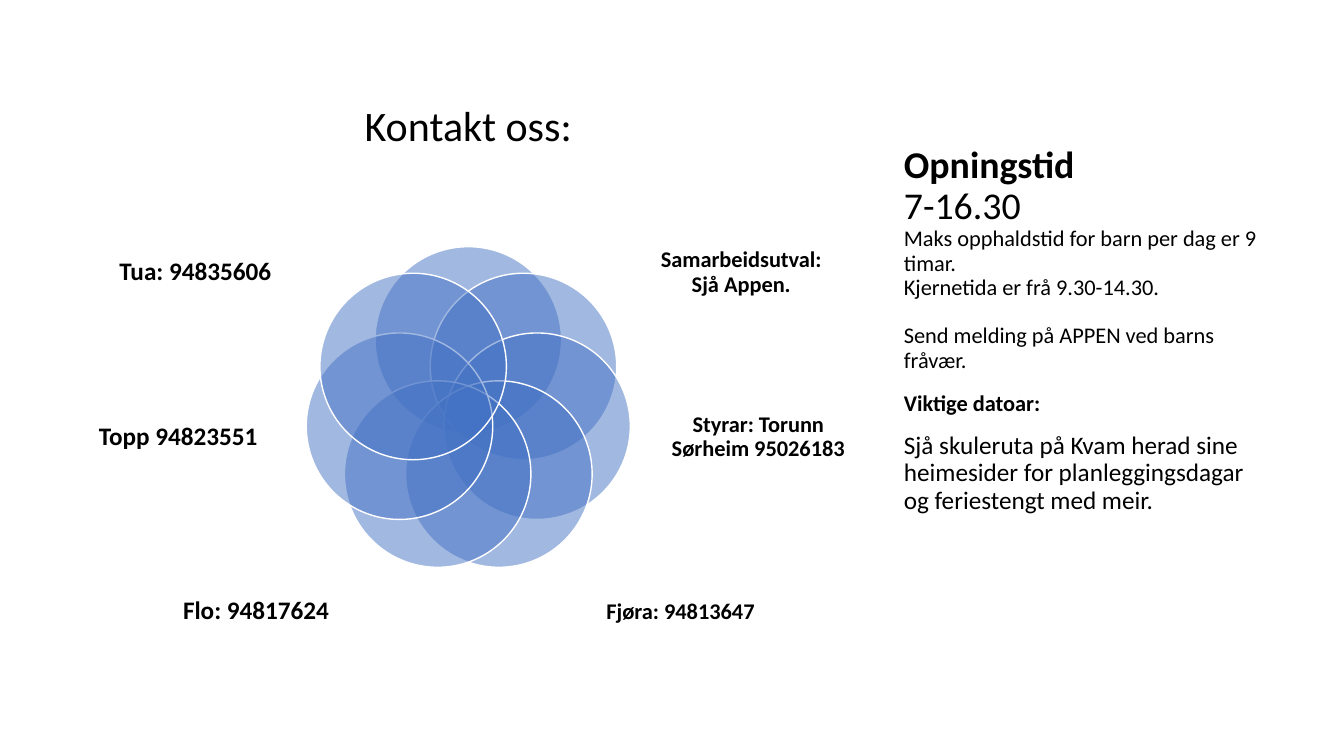
from math import cos, pi, sin
from lxml.etree import SubElement
from pptx import Presentation
from pptx.dml.color import RGBColor
from pptx.enum.shapes import MSO_SHAPE
from pptx.enum.text import MSO_ANCHOR, PP_ALIGN
from pptx.oxml.ns import qn
from pptx.util import Pt


def color(code):
    return RGBColor.from_string(code)


def add_text(box, lines, anchor, align, inset=None):
    left, top, width, height = box
    frame = slide.shapes.add_textbox(Pt(left), Pt(top), Pt(width), Pt(height)).text_frame
    frame.word_wrap = True
    frame.vertical_anchor = anchor
    if inset is not None:
        frame.margin_left = frame.margin_right = Pt(0)
        frame.margin_top = frame.margin_bottom = Pt(inset)
    for i, (text, size, bold, gap) in enumerate(lines):
        para = frame.paragraphs[0] if i == 0 else frame.add_paragraph()
        para.alignment = align
        para.line_spacing = 0.9
        para.space_before = Pt(gap)
        run = para.add_run()
        run.text = text
        run.font.name = "Calibri"
        run.font.size = Pt(size)
        run.font.bold = bold
        run.font.color.rgb = color("000000")


deck = Presentation()
deck.slide_width, deck.slide_height = Pt(960), Pt(540)
slide = deck.slides.add_slide(deck.slide_layouts[6])

hours = [
    ("Opningstid", 27, True, 0),
    ("7-16.30", 27, False, 0),
    ("Maks opphaldstid for barn per dag er 9 timar.", 16, False, 0),
    ("Kjernetida er frå 9.30-14.30.", 16, False, 0),
    ("Send melding på APPEN ved barns fråvær.", 16, False, 17.5),
]
add_text((638.6, 90, 273.6, 180), hours, MSO_ANCHOR.BOTTOM, PP_ALIGN.LEFT)

mid_x, mid_y, orbit, size = 334.5, 293.2, 50.4, 133.2
for i in range(7):
    angle = 2 * pi * i / 7
    left = mid_x + orbit * sin(angle) - size / 2
    top = mid_y - orbit * cos(angle) - size / 2
    petal = slide.shapes.add_shape(MSO_SHAPE.OVAL, Pt(left), Pt(top), Pt(size), Pt(size))
    petal.shadow.inherit = False
    petal.fill.solid()
    petal.fill.fore_color.rgb = color("4472C4")
    shade = petal.fill._xPr.find(qn("a:solidFill"))[0]
    SubElement(shade, qn("a:alpha")).set("val", "50000")
    petal.line.color.rgb = color("FFFFFF")
    petal.line.width = Pt(1)

add_text((258.2, 72, 152.6, 82), [("Kontakt oss:", 30, False, 0)],
         MSO_ANCHOR.TOP, PP_ALIGN.CENTER, 3)

rows = [
    (195, 149.8, 144.7, 90, ["Samarbeidsutval:", "Sjå Appen."], "Tua: 94835606"),
    (207.2, 264.2, 141.8, 96.5, ["Styrar: Torunn Sørheim 95026183"], "Topp 94823551"),
    (151.6, 393.1, 152.6, 87.8, ["Fjøra: 94813647"], "Flo: 94817624"),
]
for shift, top, width, height, right, left in rows:
    for side, texts, points in ((1, right, 16), (-1, [left], 18)):
        box = (mid_x + side * shift - width / 2, top, width, height)
        add_text(box, [(text, points, True, 0) for text in texts],
                 MSO_ANCHOR.MIDDLE, PP_ALIGN.CENTER, 0)

dates = [
    ("Viktige datoar:", 16, True, 0),
    ("Sjå skuleruta på Kvam herad sine heimesider for planleggingsdagar "
     "og feriestengt med meir.", 18, False, 12),
]
add_text((638.6, 276.5, 273.6, 165.6), dates, MSO_ANCHOR.TOP, PP_ALIGN.LEFT)

deck.save("out.pptx")
